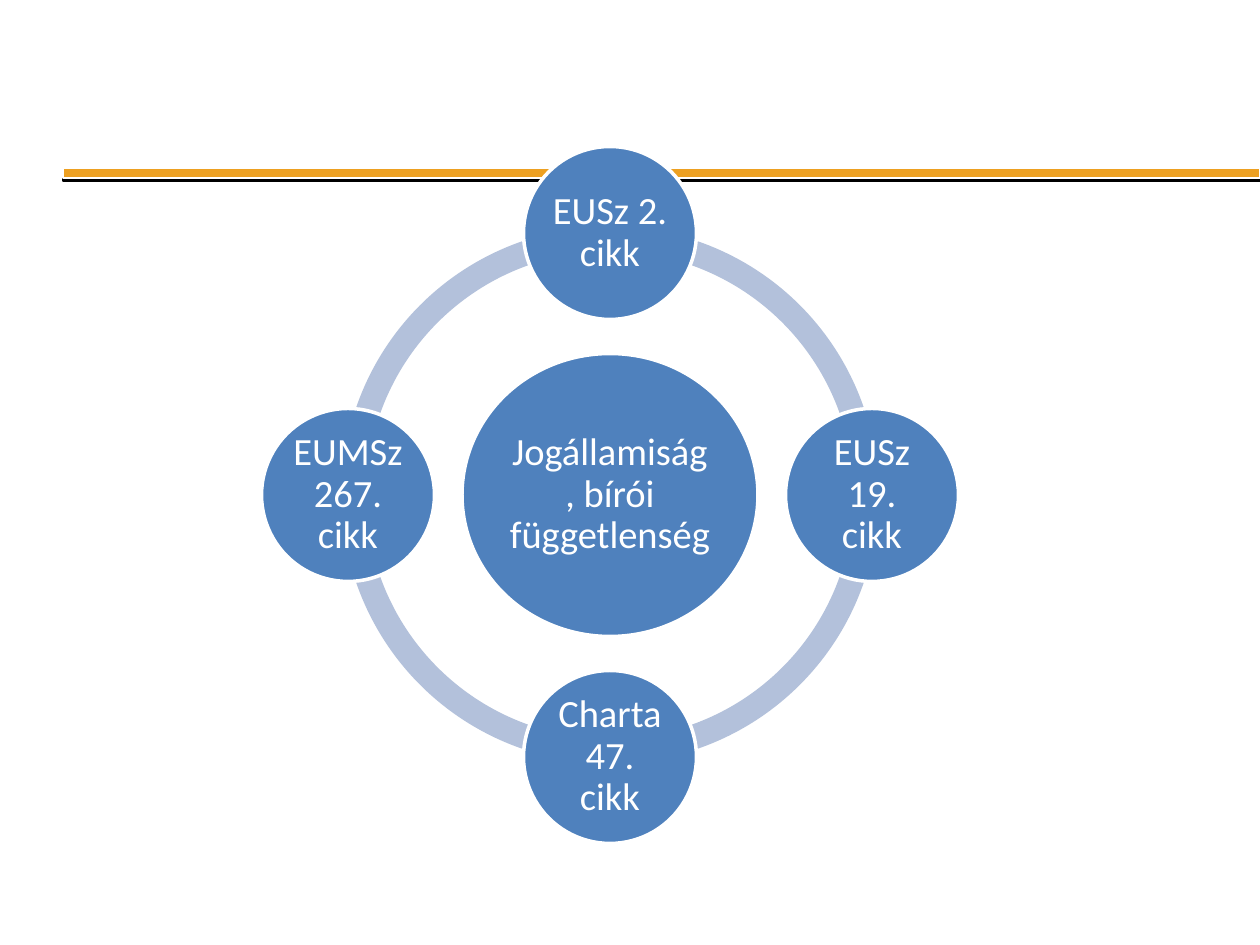
from math import cos, radians, sin

from lxml.etree import SubElement
from pptx import Presentation
from pptx.dml.color import RGBColor
from pptx.enum.shapes import MSO_SHAPE
from pptx.enum.text import MSO_ANCHOR, PP_ALIGN
from pptx.oxml.ns import qn
from pptx.util import Pt

PX = 914400 / 126
BLUE, PALE, GOLD, WHITE = "4F81BD", "B3C1DB", "EDA021", "FFFFFF"
MID_X, MID_Y = 610, 495
ORBIT, RING, NODE = 262, 537, 173

prs = Presentation()
prs.slide_width, prs.slide_height = round(1260 * PX), round(945 * PX)
slide = prs.slides.add_slide(prs.slide_layouts[6])


def draw(kind, x, y, w, h, fill, line=None, width=2):
    """Add a preset shape centred on x, y."""
    box = [round(n * PX) for n in (x - w / 2, y - h / 2, w, h)]
    shape = slide.shapes.add_shape(kind, *box)
    shape.shadow.inherit = False
    shape.fill.solid()
    shape.fill.fore_color.rgb = RGBColor.from_string(fill)
    if line:
        shape.line.color.rgb = RGBColor.from_string(line)
        shape.line.width = Pt(width)
    else:
        shape.line.fill.background()
    return shape


def write(shape, text, size=22, font="Calibri", color=WHITE, inset=4):
    frame = shape.text_frame
    frame.word_wrap = True
    frame.vertical_anchor = MSO_ANCHOR.MIDDLE
    frame.margin_left = frame.margin_right = round(inset * PX)
    frame.margin_top = frame.margin_bottom = round(inset * PX)
    para = frame.paragraphs[0]
    para.text = text
    para.alignment = PP_ALIGN.CENTER
    para.line_spacing = 0.9
    para.font.size = Pt(size)
    para.font.name = font
    para.font.color.rgb = RGBColor.from_string(color)


# Header rule with a hard black shadow below it
rule = draw(MSO_SHAPE.RECTANGLE, 661.5, 173, 1197, 10, GOLD, WHITE, 0.75)
effects = rule._element.spPr.find(qn("a:effectLst"))
shadow = SubElement(effects, qn("a:outerShdw"), dist=str(Pt(1.8)),
                    dir="5400000", algn="ctr", rotWithShape="0")
SubElement(shadow, qn("a:srgbClr"), val="000000")

# Ring of four quarter arcs; 54 adjustment units make 90 degrees
for start in (108, 54, 0, 162):
    arc = draw(MSO_SHAPE.BLOCK_ARC, MID_X, MID_Y, RING, RING, PALE)
    for i, value in enumerate((start, (start + 54) % 216, 0.046)):
        arc.adjustments[i] = value

hub = draw(MSO_SHAPE.OVAL, MID_X, MID_Y, 296, 283, BLUE, WHITE)
write(hub, "Jogállamiság, bírói függetlenség")

# Outer circles, clockwise from the top
labels = ["EUSz 2. cikk", "EUSz 19. cikk", "Charta 47. cikk", "EUMSz 267. cikk"]
for i, label in enumerate(labels):
    turn = radians(90 * i)
    x, y = MID_X + ORBIT * sin(turn), MID_Y - ORBIT * cos(turn)
    write(draw(MSO_SHAPE.OVAL, x, y, NODE, NODE, BLUE, WHITE), label)

prs.save("out.pptx")
